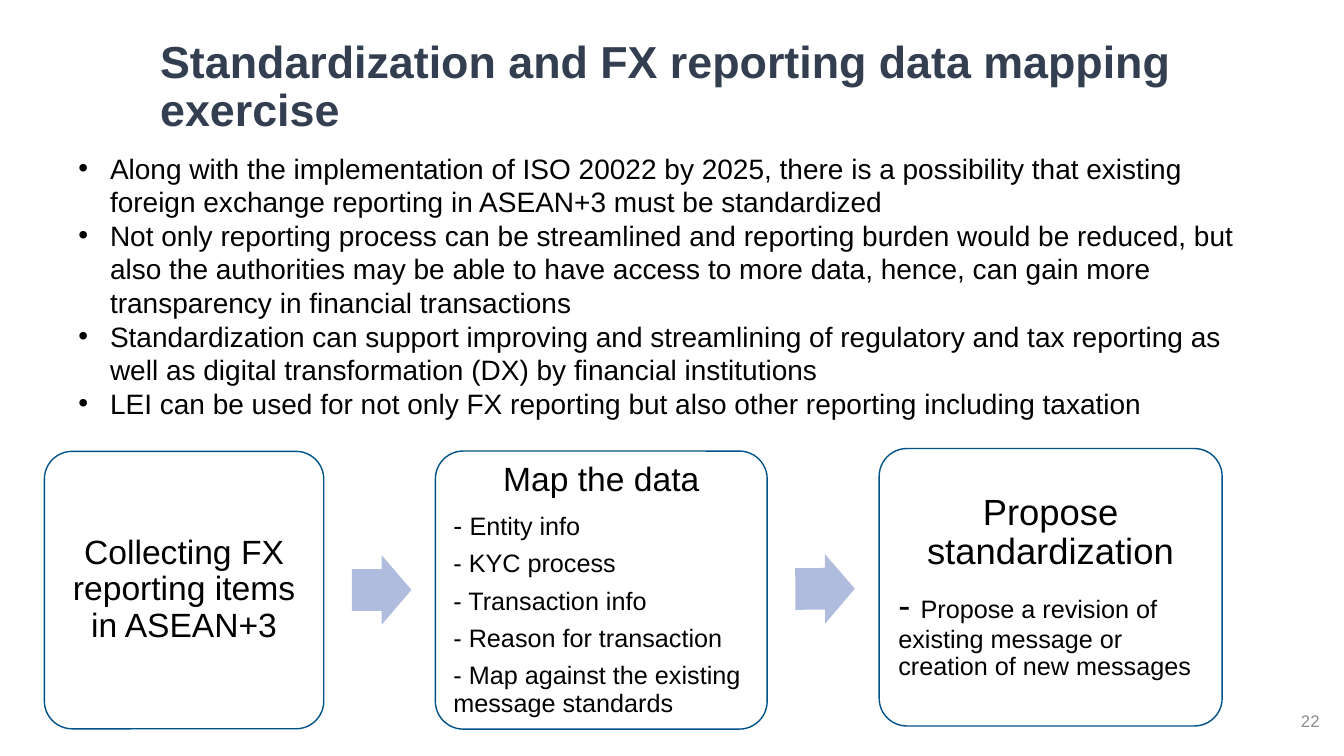
from typing import NamedTuple

from lxml.etree import SubElement
from pptx import Presentation
from pptx.dml.color import RGBColor
from pptx.enum.shapes import MSO_SHAPE as Form
from pptx.enum.text import MSO_ANCHOR as Anchor, PP_ALIGN as Align
from pptx.oxml.ns import qn
from pptx.util import Pt

NAVY = RGBColor(0x33, 0x3F, 0x50)
BLACK = RGBColor(0, 0, 0)
GRAY = RGBColor(0x8C, 0x8C, 0x8C)
BLUE = RGBColor(0x00, 0x52, 0x88)
LILAC = RGBColor(0xB0, 0xBC, 0xDE)
FACE = "Arial"
INDENT = 22.5


class Box(NamedTuple):
    left: float
    top: float
    width: float
    height: float


class Run(NamedTuple):
    text: str
    size: float


class Para(NamedTuple):
    runs: list[Run]
    align: Align
    after: float


class Card(NamedTuple):
    box: Box
    inset: float
    paras: list[Para]


class Arrow(NamedTuple):
    box: Box
    turn: float


def head(text: str, size: float) -> Para:
    return Para([Run(text, size)], Align.CENTER, size * 0.4)


def item(text: str, dash: float = 18) -> Para:
    return Para([Run("- ", dash), Run(text, 18)], Align.LEFT, 7.2)


TITLE = "Standardization and FX reporting data mapping exercise"
POINTS = [
    "Along with the implementation of ISO 20022 by 2025, there is a possibility that "
    "existing foreign exchange reporting in ASEAN+3 must be standardized",
    "Not only reporting process can be streamlined and reporting burden would be "
    "reduced, but also the authorities may be able to have access to more data, hence, "
    "can gain more transparency in financial transactions",
    "Standardization can support improving and streamlining of regulatory and tax "
    "reporting as well as digital transformation (DX) by financial institutions",
    "LEI can be used for not only FX reporting but also other reporting including "
    "taxation",
]
CARDS = [
    Card(Box(31.7, 322.4, 199.6, 198.2), 7.2,
         [head("Collecting FX reporting items in ASEAN+3", 24)]),
    Card(Box(311, 322.2, 237, 198.6), 7.2, [
        head("Map the data", 24),
        item("Entity info", 19),
        item("KYC process"),
        item("Transaction info"),
        item("Reason for transaction"),
        item("Map against the existing message standards"),
    ]),
    Card(Box(628, 320.4, 245, 198.2), 7.9, [
        head("Propose standardization", 26),
        item("Propose a revision of existing message or creation of new messages", 26),
    ]),
]
ARROWS = [
    Arrow(Box(251.4, 396.6, 42.5, 49.6), 0),
    Arrow(Box(568.1, 395.8, 42.5, 49.6), 359.7),
]


def span(box: Box) -> list[Pt]:
    return [Pt(size) for size in box]


def write(para, run: Run, color: RGBColor = BLACK, bold: bool = False) -> None:
    part = para.add_run()
    part.text = run.text
    font = part.font
    font.name, font.size, font.bold = FACE, Pt(run.size), bold
    font.color.rgb = color


def label(slide, box: Box, anchor: Anchor = Anchor.TOP):
    frame = slide.shapes.add_textbox(*span(box)).text_frame
    frame.word_wrap = True
    frame.vertical_anchor = anchor
    return frame


def draw_points(slide) -> None:
    frame = label(slide, Box(49, 104.4, 851.8, 225.4))
    for pos, text in enumerate(POINTS):
        para = frame.add_paragraph() if pos else frame.paragraphs[0]
        props = para._p.get_or_add_pPr()
        props.set("marL", str(Pt(INDENT)))
        props.set("indent", str(Pt(-INDENT)))
        SubElement(props, qn("a:buFont")).set("typeface", FACE)
        SubElement(props, qn("a:buChar")).set("char", "•")
        write(para, Run(text, 20))


def draw_card(slide, card: Card) -> None:
    shape = slide.shapes.add_shape(Form.ROUNDED_RECTANGLE, *span(card.box))
    shape.shadow.inherit = False
    shape.adjustments[0] = 0.1
    shape.fill.background()
    shape.line.color.rgb = BLUE
    shape.line.width = Pt(1)
    frame = shape.text_frame
    frame.word_wrap = True
    frame.vertical_anchor = Anchor.MIDDLE
    frame.margin_left = frame.margin_right = Pt(card.inset)
    frame.margin_top = frame.margin_bottom = Pt(card.inset)
    for pos, block in enumerate(card.paras):
        para = frame.add_paragraph() if pos else frame.paragraphs[0]
        para.alignment = block.align
        para.line_spacing = 0.9
        para.space_after = Pt(block.after)
        for run in block.runs:
            write(para, run)


def draw_arrow(slide, arrow: Arrow) -> None:
    shape = slide.shapes.add_shape(Form.RIGHT_ARROW, *span(arrow.box))
    shape.shadow.inherit = False
    shape.adjustments[0] = 0.6
    shape.adjustments[1] = 0.5
    shape.rotation = arrow.turn
    shape.fill.solid()
    shape.fill.fore_color.rgb = LILAC
    shape.line.fill.background()


def main() -> None:
    deck = Presentation()
    deck.slide_width, deck.slide_height = Pt(960), Pt(540)
    slide = deck.slides.add_slide(deck.slide_layouts[6])

    title = label(slide, Box(107.3, 10.8, 812.9, 104.4), Anchor.MIDDLE).paragraphs[0]
    title.line_spacing = 0.9
    write(title, Run(TITLE, 32), NAVY, True)

    number = label(slide, Box(733.7, 500.4, 216, 28.8), Anchor.MIDDLE).paragraphs[0]
    number.alignment = Align.RIGHT
    write(number, Run("22", 12), GRAY)

    for card in CARDS:
        draw_card(slide, card)
    for arrow in ARROWS:
        draw_arrow(slide, arrow)
    draw_points(slide)
    deck.save("out.pptx")


if __name__ == "__main__":
    main()
